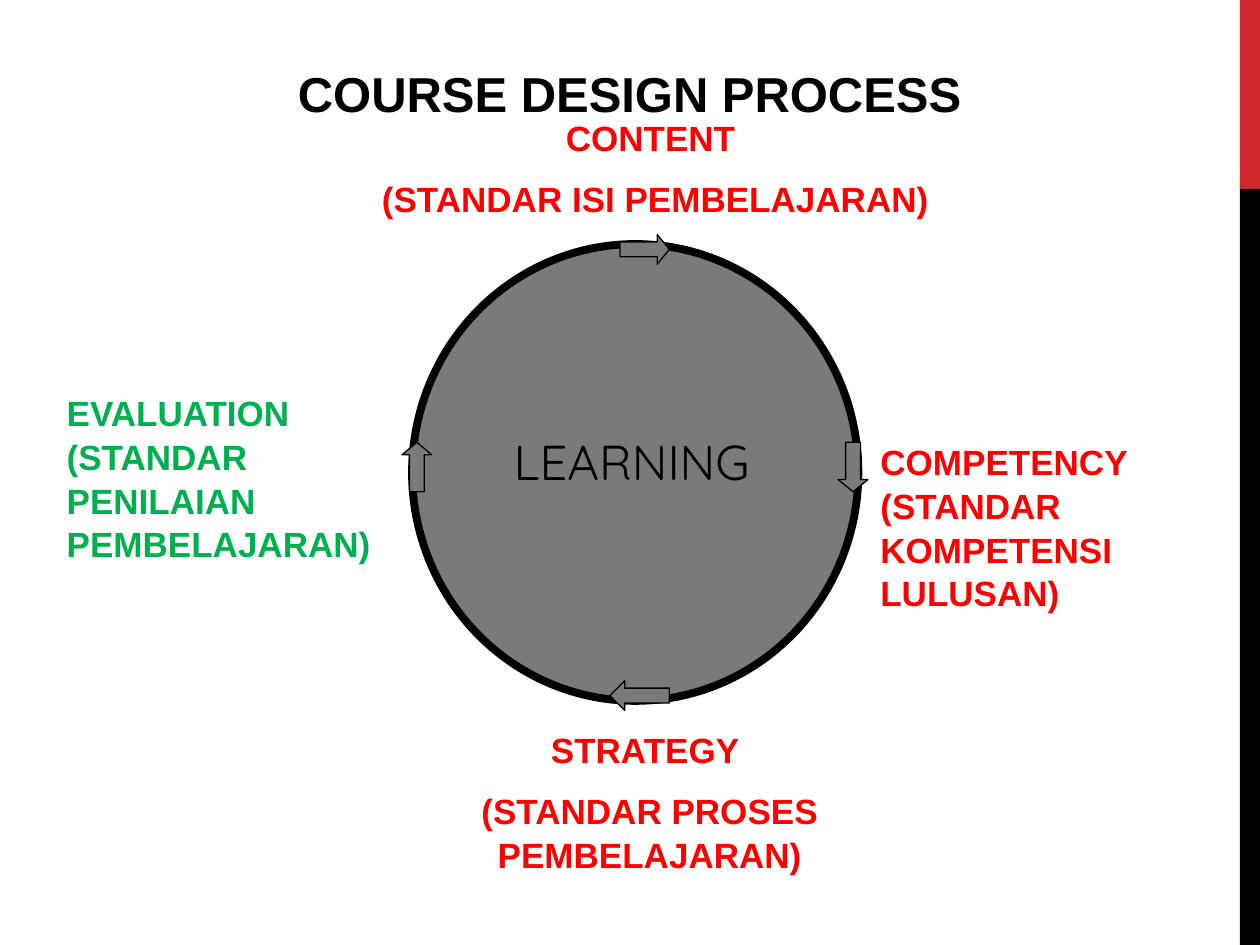
from pptx import Presentation
from pptx import util as u
from pptx.dml import color
from pptx.enum import shapes, text

Pt = u.Pt
RED, GREEN, GREY, BLACK = "FF0000", "00B050", "7A7A7A", "000000"
LEFT, CENTER = text.PP_ALIGN.LEFT, text.PP_ALIGN.CENTER
KIND = shapes.MSO_SHAPE


def paint(target, value):
    if hasattr(target, "solid"):
        target.solid()
        target = target.fore_color
    target.rgb = color.RGBColor.from_string(value)


def write(box, place, lines, style, hue, align):
    box.left, box.top, box.width, box.height = map(Pt, place)
    frame = box.text_frame
    frame.word_wrap = True
    frame.auto_size = text.MSO_AUTO_SIZE.NONE
    frame.vertical_anchor = text.MSO_ANCHOR.TOP
    for index, line in enumerate(lines):
        para = frame.add_paragraph() if index else frame.paragraphs[0]
        layout = {"alignment": align, "line_spacing": 1.04,
                  "space_before": Pt(10 if index else 0)}
        for name, value in layout.items():
            setattr(para, name, value)
        span = para.add_run()
        span.text = line
        for name, value in style.items():
            setattr(span.font, name, value)
        paint(span.font.color, hue)


deck = Presentation()
deck.slide_width, deck.slide_height = Pt(720), Pt(540)
page = deck.slides.add_slide(deck.slide_layouts[5])

figures = [
    (KIND.RECTANGLE, (708.5, 0, 11.5, 108), "D1282E", 0, None),
    (KIND.RECTANGLE, (708.5, 108, 11.5, 432), BLACK, 0, None),
    (KIND.OVAL, (235.5, 139.5, 255, 261), GREY, 4.5, None),
    (KIND.DOWN_ARROW, (479, 252.75, 17, 28.25), GREY, 0.75, 0.41),
    (KIND.UP_ARROW, (229.75, 252.75, 17, 28.25), GREY, 0.75, 0.42),
    (KIND.RIGHT_ARROW, (354.25, 134, 28.25, 17), GREY, 0.75, 0.41),
    (KIND.LEFT_ARROW, (348.5, 389, 34, 17), GREY, 0.75, 0.5),
]
for kind, place, fill, weight, head in figures:
    figure = page.shapes.add_shape(kind, *map(Pt, place))
    figure.shadow.inherit = False
    paint(figure.fill, fill)
    if weight:
        paint(figure.line.fill, BLACK)
        figure.line.width = Pt(weight)
    else:
        figure.line.fill.background()
    if head:
        figure.adjustments[1] = head

title_style = {"size": Pt(28), "name": "Arial", "bold": True}
label_style = {"size": Pt(20), "name": "Arial", "bold": True}
center_style = {"size": Pt(28), "name": "Quicksand", "bold": False}

write(page.shapes.title, (155.5, 31.5, 408.5, 41), ["COURSE DESIGN PROCESS"],
      title_style, BLACK, CENTER)

labels = [
    ((191.5, 62, 366, 68), ["CONTENT ", "(STANDAR ISI PEMBELAJARAN)"], RED, CENTER),
    ((496, 247.5, 224, 104.5), ["COMPETENCY (STANDAR KOMPETENSI LULUSAN)"], RED, LEFT),
    ((202.5, 412, 337.5, 92), ["STRATEGY ", "(STANDAR PROSES PEMBELAJARAN)"], RED, CENTER),
    ((31, 219.5, 198.5, 104.5), ["EVALUATION (STANDAR PENILAIAN PEMBELAJARAN)"], GREEN, LEFT),
]
for place, lines, hue, align in labels:
    write(page.shapes.add_textbox(0, 0, 0, 0), place, lines, label_style, hue, align)

hub = page.shapes.add_textbox(0, 0, 0, 0)
write(hub, (263.5, 242, 209.5, 41), ["LEARNING"], center_style, BLACK, LEFT)
hub.text_frame.margin_left = Pt(30)

deck.save("out.pptx")
